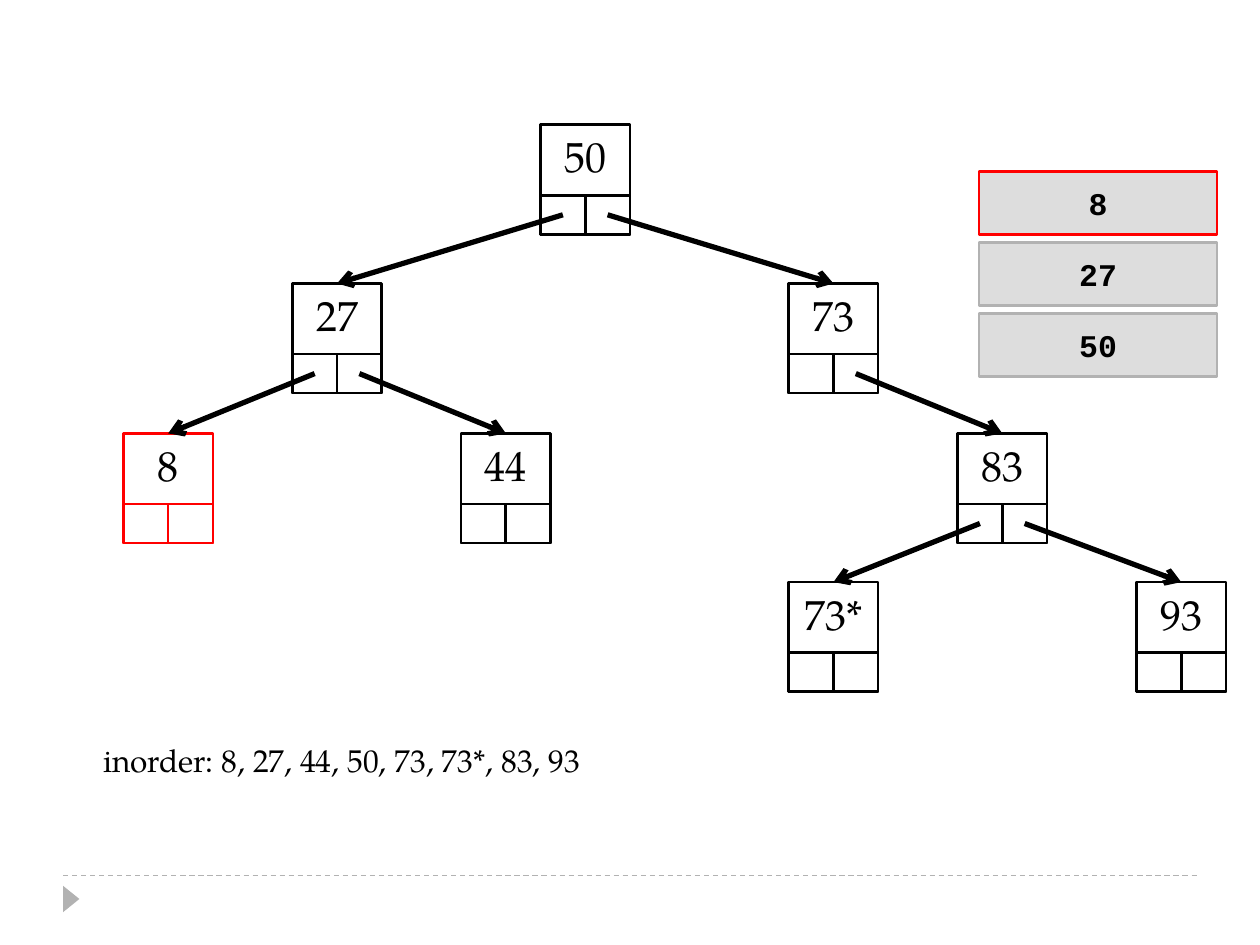
from lxml.etree import SubElement
from pptx import Presentation
from pptx.dml.color import RGBColor
from pptx.enum.dml import MSO_LINE
from pptx.enum.shapes import MSO_CONNECTOR, MSO_SHAPE
from pptx.enum.text import MSO_ANCHOR, PP_ALIGN
from pptx.oxml.ns import qn
from pptx.util import Inches, Pt

COLORS = {"black": "000000", "red": "FF0000", "gray": "B2B2B2", "light": "DDDDDD"}
SERIF, MONO = "TeX Gyre Pagella", "Courier New"

# key: (left, level, outline, left child, right child)
TREE = {
    "50": (4.29, 0, "black", "27", "73"),
    "27": (2.32, 1, "black", "8", "44"),
    "73": (6.26, 1, "black", None, "83"),
    "8": (0.98, 2, "red", None, None),
    "44": (3.66, 2, "black", None, None),
    "83": (7.6, 2, "black", "73*", "93"),
    "73*": (6.26, 3, "black", None, None),
    "93": (9.02, 3, "black", None, None),
}
LEVELS = [0.99, 2.25, 3.44, 4.62]
NODE_W, NODE_H = 0.71, 0.87
CELL_W, CELL_H = NODE_W / 2, 0.31

STACK = [("8", "red"), ("27", "gray"), ("50", "gray")]
STACK_X, STACK_Y, STACK_STEP = 7.77, 1.36, 0.565
ORDER = "inorder: 8, 27, 44, 50, 73, 73*, 83, 93"


def color(name):
    return RGBColor.from_string(COLORS[name])


def add_box(slide, x, y, w, h, outline=None, fill=None, kind=MSO_SHAPE.RECTANGLE):
    box = slide.shapes.add_shape(kind, Inches(x), Inches(y), Inches(w), Inches(h))
    box.shadow.inherit = False
    if fill:
        box.fill.solid()
        box.fill.fore_color.rgb = color(fill)
    else:
        box.fill.background()
    if outline:
        box.line.color.rgb = color(outline)
        box.line.width = Pt(1.5)
    else:
        box.line.fill.background()
    return box


def write(shape, text, font, size, bold=False, align=PP_ALIGN.CENTER,
          anchor=MSO_ANCHOR.TOP):
    frame = shape.text_frame
    frame.word_wrap = False
    frame.vertical_anchor = anchor
    par = frame.paragraphs[0]
    par.alignment = align
    run = par.add_run()
    run.text = text
    run.font.name = font
    run.font.size = Pt(size)
    run.font.bold = bold
    run.font.color.rgb = color("black")


def add_line(slide, start, end, shade, width):
    line = slide.shapes.add_connector(
        MSO_CONNECTOR.STRAIGHT, *(Inches(v) for v in (*start, *end)))
    line.line.color.rgb = color(shade)
    line.line.width = Pt(width)
    SubElement(line._element.spPr, qn("a:effectLst"))
    return line


def add_arrow(slide, start, end):
    arrow = add_line(slide, start, end, "black", 3)
    SubElement(arrow.line._get_or_add_ln(), qn("a:tailEnd"), type="arrow")


def add_node(slide, key):
    x, level, outline, *_ = TREE[key]
    y = LEVELS[level]
    write(add_box(slide, x, y, NODE_W, NODE_H, outline), key, SERIF, 24)
    for side in range(2):
        add_box(slide, x + side * CELL_W, y + NODE_H - CELL_H, CELL_W, CELL_H, outline)


def link_children(slide, key):
    """Draw an arrow from each used pointer cell to the top of its child."""
    x, level, _, *children = TREE[key]
    for side, child in enumerate(children):
        if child:
            start = (x + (side + 0.5) * CELL_W, LEVELS[level] + NODE_H - CELL_H / 2)
            end = (TREE[child][0] + NODE_W / 2, LEVELS[TREE[child][1]])
            add_arrow(slide, start, end)


def main():
    deck = Presentation()
    deck.slide_width, deck.slide_height = Inches(10), Inches(7.5)
    slide = deck.slides.add_slide(deck.slide_layouts[6])

    rule = add_line(slide, (0.5, 6.95), (9.5, 6.95), "gray", 0.75)
    rule.line.dash_style = MSO_LINE.DASH
    marker = add_box(slide, 0.46, 7.07, 0.21, 0.13, fill="gray",
                     kind=MSO_SHAPE.ISOSCELES_TRIANGLE)
    marker.rotation = 90

    for key in TREE:
        add_node(slide, key)
    for key in TREE:
        link_children(slide, key)

    note = slide.shapes.add_textbox(Inches(0.72), Inches(5.83), Inches(4.02), Inches(0.4))
    write(note, ORDER, SERIF, 18, align=PP_ALIGN.LEFT)

    for i, (key, outline) in enumerate(STACK):
        box = add_box(slide, STACK_X, STACK_Y + i * STACK_STEP, 1.89, 0.5, outline, "light")
        write(box, key, MONO, 18, bold=True, anchor=MSO_ANCHOR.MIDDLE)

    deck.save("out.pptx")


if __name__ == "__main__":
    main()
